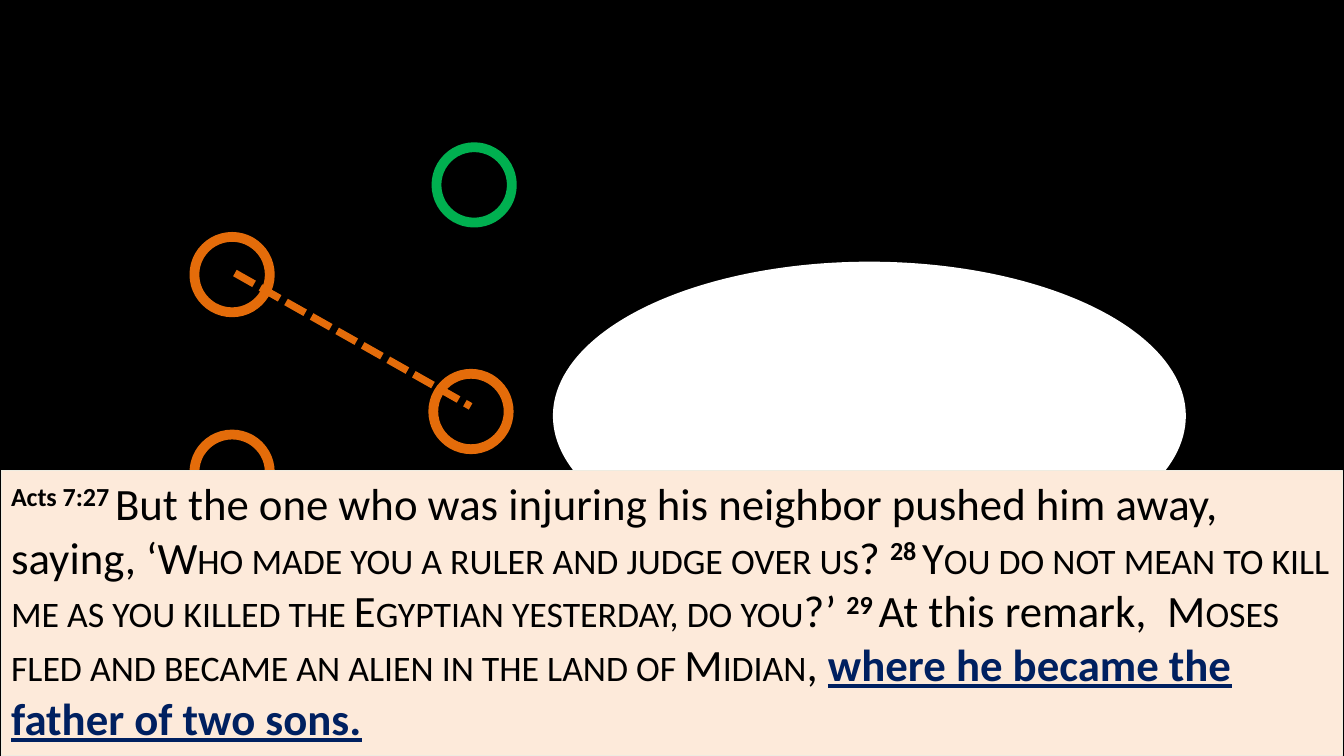
from pptx import Presentation
from pptx import util as u
from pptx.dml.color import RGBColor
from pptx.enum import dml, shapes, text
from pptx.oxml.ns import qn
from lxml import etree

COLORS = {
    "night": "000000",
    "orange": "E46C0A",
    "green": "00B050",
    "white": "FFFFFF",
    "cream": "FDEADA",
    "edge": "EEECE1",
    "ink": "000000",
    "navy": "002060",
}

PLAIN, NUMBER, CAPS, KEY = "plain", "number", "caps", "key"

VERSES = [
    ("Acts 7:27\u00a0", NUMBER),
    ("But the one who was injuring his neighbor pushed him away, saying, ‘", PLAIN),
    ("Who made you a ruler and judge over us", CAPS),
    ("? ", PLAIN),
    ("28\u00a0", NUMBER),
    ("You do not mean to kill me as you killed the Egyptian yesterday, do you", CAPS),
    ("?’\u00a0", PLAIN),
    ("29\u00a0", NUMBER),
    ("At this remark,  ", PLAIN),
    ("Moses fled and became an alien in the land of\u00a0Midian", CAPS),
    (", ", PLAIN),
    ("where he\u00a0became the father of two sons.", KEY),
]


def color(name):
    return RGBColor.from_string(COLORS[name])


def add_figure(slide, kind, box, fill, line, width):
    figure = slide.shapes.add_shape(kind, *map(u.Cm, box))
    figure.shadow.inherit = False
    if fill:
        figure.fill.solid()
        figure.fill.fore_color.rgb = color(fill)
    else:
        figure.fill.background()
    figure.line.color.rgb = color(line)
    figure.line.width = u.Pt(width)
    return figure


def add_family_tree(slide, box):
    left, top = box
    ring = 1.9

    def add_person(x, y, tint):
        add_figure(slide, shapes.MSO_SHAPE.OVAL,
                   (left + x, top + y, ring, ring), None, tint, 7)

    add_person(0, 7.24, "orange")
    add_person(0, 2.26, "orange")
    add_figure(slide, shapes.MSO_SHAPE.OVAL,
               (left + 9.07, top + 2.92, 15.88, 7.7), "white", "white", 2)
    add_person(6.1, 0, "green")
    add_person(6.02, 5.71, "orange")

    bond = slide.shapes.add_connector(
        shapes.MSO_CONNECTOR.STRAIGHT,
        u.Cm(left + 1.02), u.Cm(top + 3.17), u.Cm(left + 6.96), u.Cm(top + 6.53))
    bond.line.color.rgb = color("orange")
    bond.line.width = u.Pt(5.25)
    bond.line.dash_style = dml.MSO_LINE.SQUARE_DOT
    etree.SubElement(bond._element.spPr, qn("a:effectLst"))


def add_passage(slide, box):
    panel = add_figure(slide, shapes.MSO_SHAPE.RECTANGLE, box, "cream", "edge", 0.75)
    frame = panel.text_frame
    frame.word_wrap = True
    frame.vertical_anchor = text.MSO_ANCHOR.TOP
    verse = frame.paragraphs[0]
    verse.alignment = text.PP_ALIGN.LEFT
    for words, style in VERSES:
        run = verse.add_run()
        run.text = words
        run.font.name = "Calibri"
        run.font.size = u.Pt(32)
        run.font.bold = style in (NUMBER, KEY)
        run.font.underline = style == KEY
        run.font.color.rgb = color("navy" if style == KEY else "ink")
        properties = run._r.get_or_add_rPr()
        if style == NUMBER:
            properties.set("baseline", "30000")
        elif style == CAPS:
            properties.set("cap", "small")


def build_slide(deck):
    slide = deck.slides.add_slide(deck.slide_layouts[6])
    slide.background.fill.solid()
    slide.background.fill.fore_color.rgb = color("night")
    add_family_tree(slide, (4.9, 3.71))
    add_passage(slide, (0.03, 11.86, 33.81, 7.19))


def main():
    deck = Presentation()
    deck.slide_width = u.Cm(33.87)
    deck.slide_height = u.Cm(19.05)
    build_slide(deck)
    deck.save("out.pptx")


if __name__ == "__main__":
    main()
